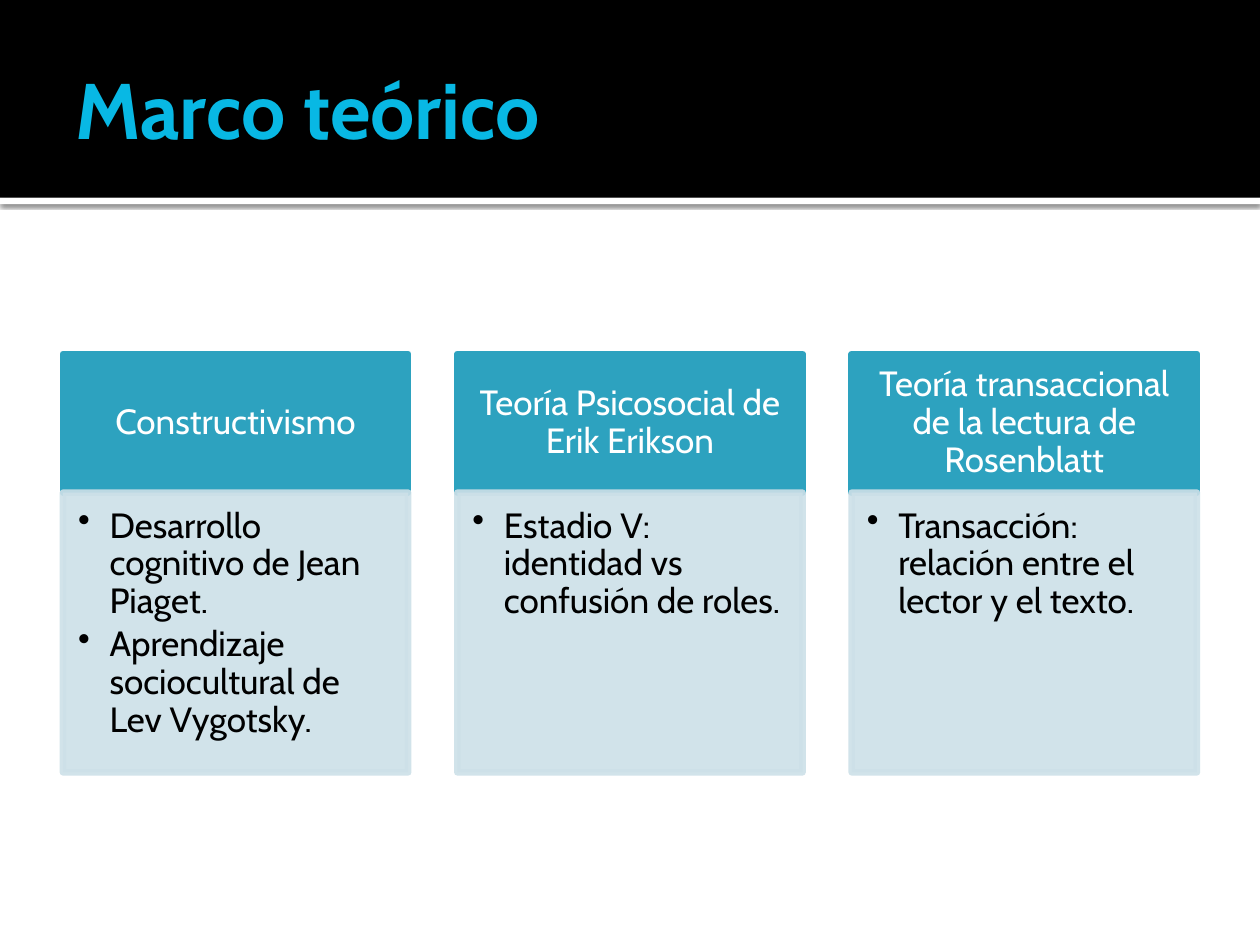
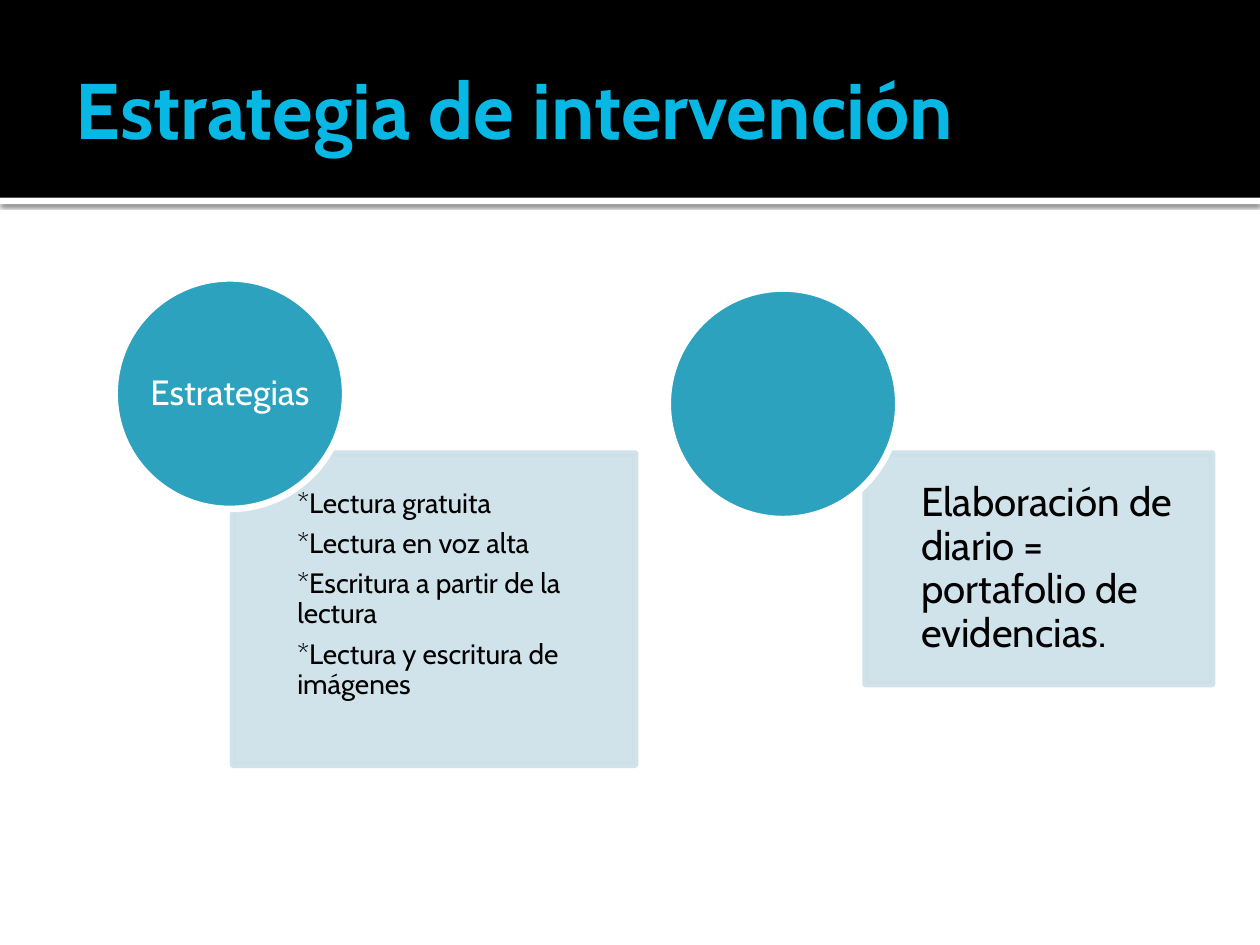
from dataclasses import dataclass

from lxml import etree
from pptx import Presentation
from pptx.dml.color import RGBColor
from pptx.enum.shapes import MSO_SHAPE
from pptx.enum.text import MSO_ANCHOR, MSO_AUTO_SIZE, PP_ALIGN
from pptx.oxml.ns import qn
from pptx.util import Inches, Pt

RECTANGLE, OVAL = MSO_SHAPE.RECTANGLE, MSO_SHAPE.OVAL
TOP, MIDDLE = MSO_ANCHOR.TOP, MSO_ANCHOR.MIDDLE
LEFT, CENTER = PP_ALIGN.LEFT, PP_ALIGN.CENTER
NO_AUTO_SIZE = MSO_AUTO_SIZE.NONE

FONT = "Cabin"
BLACK, WHITE = "000000", "FFFFFF"
TITLE_BLUE, TEAL, PALE = "08B8E4", "2DA2BF", "CDE0E8"
LINE_WIDTH = 3.78
PALE_OPACITY = 90
TITLE_ONLY_LAYOUT = 5
SLIDE_WIDTH, SLIDE_HEIGHT = 10, 7.5
BAND_HEIGHT, RULE_HEIGHT = 1.57, 0.05

COLUMN_LEFT, COLUMN_WIDTH, COLUMN_SPAN = 0.5, 2.74, 9
HEADER_TOP, HEADER_HEIGHT, BODY_HEIGHT = 2.81, 1.1, 2.22
DETAIL_TOP, CIRCLE_SIZE = 3.6, 1.83


@dataclass(frozen=True)
class TextStyle:
    size: float
    color: str
    insets: tuple[float, float, float, float]
    anchor: int = MIDDLE
    align: int = LEFT
    bold: bool = False
    line_spacing: float = 0.9
    space_ratio: float = 0.36
    bullet_indent: float = 0


@dataclass(frozen=True)
class Theory:
    name: str
    points: list[str]


@dataclass(frozen=True)
class Strategy:
    label: str
    circle_left: float
    circle_top: float
    details: list[str]
    detail_left: float
    detail_width: float
    detail_height: float
    detail_style: TextStyle


TITLE_STYLE = TextStyle(45, TITLE_BLUE, (0.1, 0.05, 0.05, 0.05), bold=True,
                        line_spacing=1, space_ratio=0)
HEADER_STYLE = TextStyle(20, WHITE, (0.16, 0.09, 0.16, 0.09), align=CENTER)
BODY_STYLE = TextStyle(20, BLACK, (0.12, 0.12, 0.16, 0.17), anchor=TOP,
                       space_ratio=0.15, bullet_indent=0.25)
CIRCLE_STYLE = TextStyle(20, WHITE, (0, 0, 0, 0), align=CENTER)

THEORIES = [
    Theory("Constructivismo", ["Desarrollo cognitivo de Jean Piaget.",
                               "Aprendizaje sociocultural de Lev Vygotsky."]),
    Theory("Teoría Psicosocial de Erik Erikson",
           ["Estadio V: identidad vs confusión de roles."]),
    Theory("Teoría transaccional de la lectura de Rosenblatt",
           ["Transacción: relación entre el lector y el texto."]),
]
STRATEGIES = [
    Strategy("Estrategias", 0.91, 2.21,
             ["*Lectura gratuita", "*Lectura en voz alta",
              "*Escritura a partir de la lectura",
              "*Lectura y escritura de imágenes"],
             1.85, 3.19, 2.47, TextStyle(16, BLACK, (0.51, 0.12, 0.12, 0.35))),
    Strategy("", 5.3, 2.29,
             ["Elaboración de diario = portafolio de evidencias."],
             6.87, 2.75, 1.83, TextStyle(23, BLACK, (0.44, 0.18, 0.18, 0.18))),
]


def rgb(color: str) -> RGBColor:
    return RGBColor.from_string(color)


def add_bullet(para, indent: float) -> None:
    properties = para._p.get_or_add_pPr()
    properties.set("marL", str(Inches(indent)))
    properties.set("indent", str(-Inches(indent)))
    etree.SubElement(properties, qn("a:buChar")).set("char", "•")


def write_text(shape, lines: list[str], style: TextStyle) -> None:
    frame = shape.text_frame
    frame.text = "\n".join(lines)
    frame.word_wrap = True
    frame.auto_size = NO_AUTO_SIZE
    frame.vertical_anchor = style.anchor
    (frame.margin_left, frame.margin_top,
     frame.margin_right, frame.margin_bottom) = map(Inches, style.insets)
    for para in frame.paragraphs:
        para.alignment = style.align
        para.line_spacing = style.line_spacing
        para.space_after = Pt(style.size * style.space_ratio)
        if style.bullet_indent:
            add_bullet(para, style.bullet_indent)
        for span in para.runs:
            span.font.name = FONT
            span.font.size = Pt(style.size)
            span.font.bold = style.bold
            span.font.color.rgb = rgb(style.color)


def add_box(slide, kind, left: float, top: float, width: float, height: float,
            fill: str, line: str | None = None, opacity: int = 100):
    box = slide.shapes.add_shape(kind, *map(Inches, (left, top, width, height)))
    box.shadow.inherit = False
    box.fill.solid()
    box.fill.fore_color.rgb = rgb(fill)
    if line:
        box.line.color.rgb = rgb(line)
        box.line.width = Pt(LINE_WIDTH)
    else:
        box.line.fill.background()
    if opacity < 100:
        for color in box.element.spPr.iter(qn("a:srgbClr")):
            etree.SubElement(color, qn("a:alpha")).set("val", str(opacity * 1000))
    return box


def add_rule_shadow(rule) -> None:
    effects = rule.element.spPr.find(qn("a:effectLst"))
    shadow = etree.SubElement(effects, qn("a:outerShdw"), blurRad=str(Pt(2.5)),
                              dist=str(Pt(0.8)), dir="5400000", rotWithShape="0")
    color = etree.SubElement(shadow, qn("a:srgbClr"), val=BLACK)
    etree.SubElement(color, qn("a:alpha"), val="60000")


def style_layout(layout, slide) -> None:
    """Give the layout its title place and bands, drawn on a slide and moved over."""
    title = next(iter(layout.placeholders))
    title.left, title.top, title.width, title.height = map(
        Inches, (0.5, 0.17, 9, 1.37))
    rule = add_box(slide, RECTANGLE, 0, BAND_HEIGHT, SLIDE_WIDTH, RULE_HEIGHT, WHITE)
    add_rule_shadow(rule)
    band = add_box(slide, RECTANGLE, 0, 0, SLIDE_WIDTH, BAND_HEIGHT, BLACK)
    for position, shape in enumerate((rule, band), start=2):
        layout.shapes.element.insert(position, shape.element)


def add_titled_slide(deck, title: str):
    slide = deck.slides.add_slide(deck.slide_layouts[TITLE_ONLY_LAYOUT])
    write_text(slide.shapes.title, [title], TITLE_STYLE)
    return slide


def add_theories(slide) -> None:
    pitch = (COLUMN_SPAN - COLUMN_WIDTH) / (len(THEORIES) - 1)
    for column, theory in enumerate(THEORIES):
        left = COLUMN_LEFT + column * pitch
        header = add_box(slide, RECTANGLE, left, HEADER_TOP, COLUMN_WIDTH,
                         HEADER_HEIGHT, TEAL, TEAL)
        write_text(header, [theory.name], HEADER_STYLE)
        body = add_box(slide, RECTANGLE, left, HEADER_TOP + HEADER_HEIGHT,
                       COLUMN_WIDTH, BODY_HEIGHT, PALE, PALE, PALE_OPACITY)
        write_text(body, theory.points, BODY_STYLE)


def add_strategies(slide) -> None:
    for strategy in STRATEGIES:
        detail = add_box(slide, RECTANGLE, strategy.detail_left, DETAIL_TOP,
                         strategy.detail_width, strategy.detail_height,
                         PALE, PALE, PALE_OPACITY)
        write_text(detail, strategy.details, strategy.detail_style)
        circle = add_box(slide, OVAL, strategy.circle_left, strategy.circle_top,
                         CIRCLE_SIZE, CIRCLE_SIZE, TEAL, WHITE)
        if strategy.label:
            write_text(circle, [strategy.label], CIRCLE_STYLE)


def main() -> None:
    deck = Presentation()
    deck.slide_width, deck.slide_height = Inches(SLIDE_WIDTH), Inches(SLIDE_HEIGHT)
    theory_slide = add_titled_slide(deck, "Marco teórico")
    style_layout(theory_slide.slide_layout, theory_slide)
    add_theories(theory_slide)
    add_strategies(add_titled_slide(deck, "Estrategia de intervención"))
    deck.save("out.pptx")


if __name__ == "__main__":
    main()
